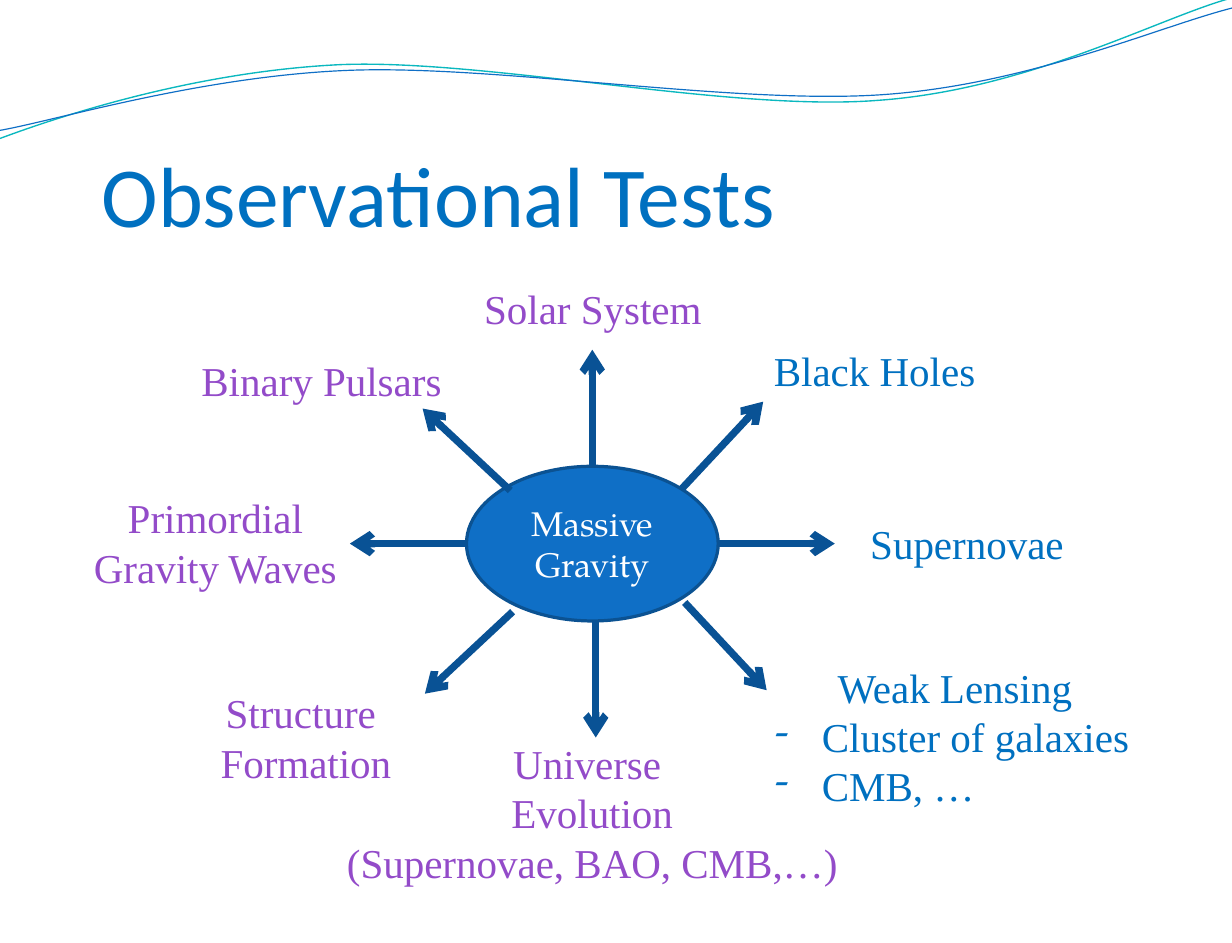
from dataclasses import dataclass
from math import cos, radians, sin

from lxml import etree
from pptx import Presentation
from pptx.dml.color import RGBColor
from pptx.enum.shapes import MSO_CONNECTOR, MSO_SHAPE
from pptx.enum.text import MSO_ANCHOR, MSO_AUTO_SIZE, PP_ALIGN
from pptx.oxml.ns import qn
from pptx.util import Inches, Pt


@dataclass(frozen=True)
class Theme:
    blue: RGBColor = RGBColor.from_string("0070C0")
    purple: RGBColor = RGBColor.from_string("934BC9")
    white: RGBColor = RGBColor.from_string("FFFFFF")
    teal: RGBColor = RGBColor.from_string("0AB8BF")
    hub_fill: RGBColor = RGBColor.from_string("0F6FC6")
    hub_line: RGBColor = RGBColor.from_string("0B5292")
    arrow: RGBColor = RGBColor.from_string("095295")
    title_font: str = "Calibri"
    hub_font: str = "TeX Gyre Pagella"
    label_font: str = "Times New Roman"
    title_size: float = 53.3
    hub_size: float = 21.3
    label_size: float = 25.6


THEME = Theme()
WAVE_TILT = 2.7

# Each wave: colour, width, start point followed by three points per cubic curve
WAVES = [
    (THEME.teal, 0.85, [
        (0, 1.2),
        (0.51, 1.01), (1.68, 0.62), (2.95, 0.56),
        (4.22, 0.51), (6.32, 0.97), (7.6, 0.87),
        (8.89, 0.78), (10.01, 0.17), (10.64, -0.01)]),
    (THEME.hub_fill, 0.75, [
        (0, 1.13),
        (0.5, 1.04), (1.75, 0.66), (3.02, 0.61),
        (4.29, 0.56), (6.37, 0.91), (7.65, 0.82),
        (8.92, 0.73), (10.04, 0.23), (10.67, 0.07)]),
]

# Each arrow: start point, end point
ARROWS = [
    ((5.13, 4.04), (5.13, 3.03)),
    ((5.9, 4.24), (6.61, 3.48)),
    ((6.22, 4.71), (7.23, 4.71)),
    ((5.93, 5.22), (6.64, 5.98)),
    ((5.16, 5.38), (5.16, 6.39)),
    ((4.44, 5.3), (3.68, 6.01)),
    ((4.04, 4.71), (3.03, 4.71)),
    ((4.42, 4.25), (3.66, 3.54)),
]

# Each label: left, top, width, height, colour, wrap, paragraphs
LABELS = [
    (4.08, 2.41, 2.11, 0.53, THEME.purple, False, ["Solar System"]),
    (6.59, 2.94, 1.97, 0.53, THEME.blue, False, ["Black Holes"]),
    (7.43, 4.44, 1.89, 0.53, THEME.blue, False, ["Supernovae"]),
    (6.62, 5.69, 3.3, 1.39, THEME.blue, False,
     ["Weak Lensing", "- Cluster of galaxies", "- CMB, …"]),
    (2.88, 6.35, 4.5, 1.39, THEME.purple, False,
     ["Universe \vEvolution\v(Supernovae, BAO, CMB,…)"]),
    (1.8, 5.91, 1.7, 0.96, THEME.purple, False, ["Structure ", "Formation"]),
    (0.44, 4.22, 2.85, 0.96, THEME.purple, True, ["Primordial Gravity Waves"]),
    (1.36, 3.03, 2.85, 0.53, THEME.purple, True, ["Binary Pulsars"]),
]


def set_font(para, name, size, color):
    para.font.name = name
    para.font.size = Pt(size)
    para.font.color.rgb = color


def add_dash_bullet(para):
    properties = para._p.get_or_add_pPr()
    properties.set("marL", str(Inches(0.4)))
    properties.set("indent", str(-Inches(0.4)))
    etree.SubElement(properties, qn("a:buFont")).set("typeface", THEME.hub_font)
    etree.SubElement(properties, qn("a:buChar")).set("char", "-")


def turn(x, y, degrees):
    angle = radians(degrees)
    return x * cos(angle) - y * sin(angle), x * sin(angle) + y * cos(angle)


def bend_lines(wave):
    """Turn every three straight segments into one cubic curve."""
    segments = list(wave._element.iter(qn("a:lnTo")))
    for first in range(0, len(segments), 3):
        trio = segments[first:first + 3]
        curve = etree.Element(qn("a:cubicBezTo"))
        trio[0].addprevious(curve)
        for segment in trio:
            curve.append(segment[0])
            segment.getparent().remove(segment)


def add_wave(page, color, width, points):
    # Draw the wave level, then tilt it back around its own centre
    level = [tuple(Inches(value) for value in turn(*point, WAVE_TILT)) for point in points]
    builder = page.shapes.build_freeform(*level[0])
    builder.add_line_segments(level[1:], close=False)
    wave = builder.convert_to_shape()
    bend_lines(wave)
    center_x, center_y = turn(wave.left + wave.width / 2,
                              wave.top + wave.height / 2, -WAVE_TILT)
    wave.left = round(center_x - wave.width / 2)
    wave.top = round(center_y - wave.height / 2)
    wave.rotation = -WAVE_TILT
    wave.shadow.inherit = False
    wave.fill.background()
    wave.line.color.rgb = color
    wave.line.width = Pt(width)


def format_title(page):
    title = page.shapes.title
    title.left, title.top = Inches(0.88), Inches(0.89)
    title.width, title.height = Inches(8.14), Inches(1.23)
    frame = title.text_frame
    frame.margin_left = frame.margin_right = frame.margin_bottom = 0
    frame.margin_top = Inches(0.05)
    frame.vertical_anchor = MSO_ANCHOR.BOTTOM
    frame.auto_size = MSO_AUTO_SIZE.NONE
    para = frame.paragraphs[0]
    para.text = "Observational Tests"
    para.alignment = PP_ALIGN.LEFT
    set_font(para, THEME.title_font, THEME.title_size, THEME.blue)


def add_hub(page):
    hub = page.shapes.add_shape(MSO_SHAPE.OVAL, Inches(4.04), Inches(4.04),
                                Inches(2.18), Inches(1.34))
    hub.shadow.inherit = False
    hub.fill.solid()
    hub.fill.fore_color.rgb = THEME.hub_fill
    hub.line.color.rgb = THEME.hub_line
    hub.line.width = Pt(2)
    frame = hub.text_frame
    frame.word_wrap = True
    frame.vertical_anchor = MSO_ANCHOR.MIDDLE
    para = frame.paragraphs[0]
    para.text = "Massive Gravity"
    para.alignment = PP_ALIGN.CENTER
    set_font(para, THEME.hub_font, THEME.hub_size, THEME.white)


def add_arrow(page, start, end):
    arrow = page.shapes.add_connector(
        MSO_CONNECTOR.STRAIGHT, *(Inches(value) for value in (*start, *end)))
    arrow.line.color.rgb = THEME.arrow
    arrow.line.width = Pt(4.5)
    etree.SubElement(arrow.line._get_or_add_ln(), qn("a:tailEnd")).set("type", "arrow")
    etree.SubElement(arrow._element.spPr, qn("a:effectLst"))


def add_label(page, left, top, width, height, color, wrap, lines):
    box = page.shapes.add_textbox(Inches(left), Inches(top), Inches(width), Inches(height))
    frame = box.text_frame
    frame.word_wrap = wrap
    frame.auto_size = MSO_AUTO_SIZE.SHAPE_TO_FIT_TEXT
    for index, line in enumerate(lines):
        para = frame.add_paragraph() if index else frame.paragraphs[0]
        para.text = line.removeprefix("- ")
        if line.startswith("- "):
            add_dash_bullet(para)
            para.alignment = PP_ALIGN.LEFT
        else:
            para.alignment = PP_ALIGN.CENTER
        set_font(para, THEME.label_font, THEME.label_size, color)


def main():
    deck = Presentation()
    deck.slide_width, deck.slide_height = Inches(10.67), Inches(8.17)
    page = deck.slides.add_slide(deck.slide_layouts[5])

    # Decorative waves and title
    for wave in WAVES:
        add_wave(page, *wave)
    format_title(page)

    # Central theory with its observational tests
    add_hub(page)
    for start, end in ARROWS:
        add_arrow(page, start, end)
    for label in LABELS:
        add_label(page, *label)

    deck.save("out.pptx")


if __name__ == "__main__":
    main()
